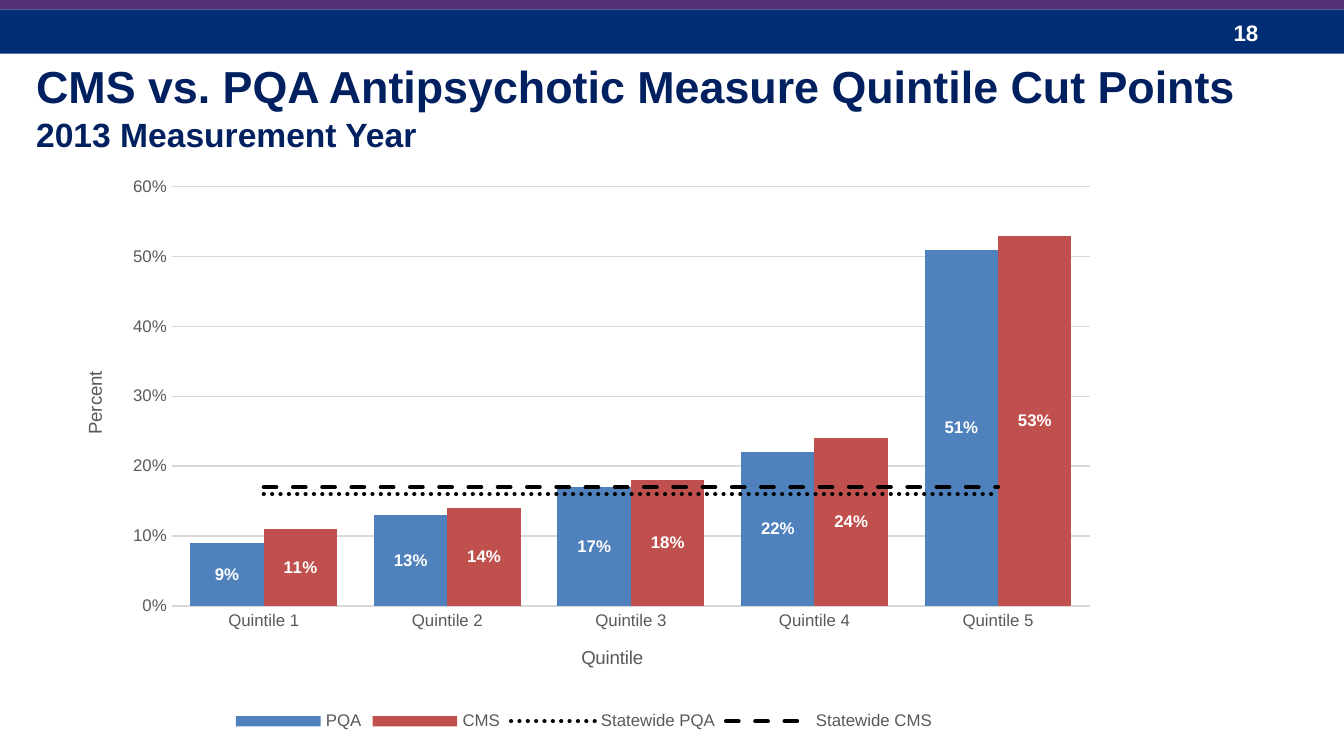
from lxml import etree
from pptx import Presentation
from pptx.chart.data import CategoryChartData
from pptx.dml.color import RGBColor
from pptx.enum import chart as charts, dml, shapes, text
from pptx.oxml import ns
from pptx.util import Inches, Pt

FONT = "Arial"
GREY = "595959"
GRID = "D9D9D9"
CHART_WIDTH, CHART_HEIGHT = 7.85, 4.25


def color(value):
    return RGBColor.from_string(value)


def style(font, size, value, bold=False):
    font.name = FONT
    font.size = Pt(size)
    font.bold = bold
    font.color.rgb = color(value)


def add_band(page, top, height, fill):
    band = page.shapes.add_shape(shapes.MSO_SHAPE.RECTANGLE, 0, Inches(top),
                                 Inches(10), Inches(height))
    band.shadow.inherit = False
    band.fill.solid()
    band.fill.fore_color.rgb = color(fill)
    band.line.fill.background()


def add_text(page, place, lines, value, gap=0):
    box = page.shapes.add_textbox(*(Inches(n) for n in place))
    frame = box.text_frame
    frame.word_wrap = True
    frame.margin_top = Inches(0.04)
    frame.vertical_anchor = text.MSO_ANCHOR.TOP
    for index, (words, size) in enumerate(lines):
        para = frame.add_paragraph() if index else frame.paragraphs[0]
        if index:
            para.space_before = Pt(gap)
        span = para.add_run()
        span.text = words
        style(span.font, size, value, True)


def child(parent, tag, value=None):
    node = etree.SubElement(parent, ns.qn(tag))
    if value is not None:
        node.set("val", str(value))
    return node


def set_layout(parent, index, inner=False, **inches):
    """Place a chart part, measured in inches from the chart's corner."""
    for old in parent.findall(ns.qn("c:layout")):
        parent.remove(old)
    layout = etree.Element(ns.qn("c:layout"))
    manual = child(layout, "c:manualLayout")
    if inner:
        child(manual, "c:layoutTarget", "inner")
    for side in "xy":
        child(manual, f"c:{side}Mode", "edge")
    for name, value in inches.items():
        whole = CHART_WIDTH if name in "xw" else CHART_HEIGHT
        child(manual, f"c:{name}", value / whole)
    parent.insert(index, layout)


def style_axis(axis, title, x, y):
    axis.major_tick_mark = axis.minor_tick_mark = charts.XL_TICK_MARK.NONE
    style(axis.tick_labels.font, 9, GREY)
    span = axis.axis_title.text_frame.paragraphs[0].add_run()
    span.text = title
    style(span.font, 10, GREY)
    set_layout(axis.axis_title._element, 1, x=x, y=y)


def style_line(line, value, width=0.75):
    line.color.rgb = color(value)
    line.width = Pt(width)


def style_bars(series, fill):
    series.format.fill.solid()
    series.format.fill.fore_color.rgb = color(fill)
    labels = series.data_labels
    labels.show_value = True
    labels.number_format = "0%"
    labels.number_format_is_linked = False
    labels.position = charts.XL_LABEL_POSITION.CENTER
    style(labels.font, 9, "FFFFFF", True)


def move_to_lines(chart, first):
    """Turn the series from index first on into lines on the same axes."""
    bars = chart.plots[0]._element
    lines = etree.Element(ns.qn("c:lineChart"))
    child(lines, "c:grouping", "standard")
    child(lines, "c:varyColors", 0)
    for series in bars.findall(ns.qn("c:ser"))[first:]:
        for invert in series.findall(ns.qn("c:invertIfNegative")):
            series.remove(invert)
        lines.append(series)
    child(lines, "c:marker", 1)
    for axis in bars.findall(ns.qn("c:axId")):
        child(lines, "c:axId", axis.get("val"))
    bars.addnext(lines)


def add_quintile_chart(page):
    data = CategoryChartData(number_format="0%")
    data.categories = [f"Quintile {n}" for n in range(1, 6)]
    data.add_series("PQA", [0.09, 0.13, 0.17, 0.22, 0.51])
    data.add_series("CMS", [0.11, 0.14, 0.18, 0.24, 0.53])
    data.add_series("Statewide PQA", [0.16] * 5)
    data.add_series("Statewide CMS", [0.17] * 5)
    chart = page.shapes.add_chart(
        charts.XL_CHART_TYPE.COLUMN_CLUSTERED, Inches(0.42), Inches(1.23),
        Inches(CHART_WIDTH), Inches(CHART_HEIGHT), data).chart
    style(chart.font, 10, "000000")
    chart.has_title = False

    # Axes and legend
    style_axis(chart.category_axis, "Quintile", 3.88, 3.55)
    style_line(chart.category_axis.format.line, GRID)
    values = chart.value_axis
    style_axis(values, "Percent", 0.17, 1.51)
    values.format.line.fill.background()
    values.minimum_scale, values.maximum_scale = 0, 0.6
    values.major_unit = 0.1
    values.tick_labels.number_format = "0%"
    values.tick_labels.number_format_is_linked = False
    style_line(values.major_gridlines.format.line, GRID)
    chart.has_legend = True
    chart.legend.position = charts.XL_LEGEND_POSITION.BOTTOM
    chart.legend.include_in_layout = False
    style(chart.legend.font, 9, GREY)

    # Quintile bars
    bars = chart.plots[0]
    bars.gap_width, bars.overlap = 50, 0
    bars.vary_by_categories = False
    for series, fill in zip(bars.series, ("4F81BD", "C0504D")):
        style_bars(series, fill)

    # Statewide lines with round caps
    move_to_lines(chart, 2)
    dashes = (dml.MSO_LINE.ROUND_DOT, dml.MSO_LINE.DASH)
    for series, dash in zip(chart.plots[1].series, dashes):
        series.smooth = False
        series.marker.style = charts.XL_MARKER_STYLE.NONE
        line = series.format.line
        style_line(line, "000000", 2.25)
        line.dash_style = dash
        series._element.find(".//" + ns.qn("a:ln")).set("cap", "rnd")

    area = chart.plots[0]._element.getparent()
    set_layout(area, 0, True, x=0.86, y=0.16, w=6.83, h=3.12)


def main():
    deck = Presentation()
    deck.slide_width = Inches(10)
    deck.slide_height = Inches(10) * 9 // 16
    page = deck.slides.add_slide(deck.slide_layouts[6])
    # Header bands and page number
    add_band(page, 0.07, 0.33, "002D73")
    add_text(page, (9.08, 0.1, 0.75, 0.3), [("18", 12)], "FFFFFF")
    add_band(page, -0.02, 0.09, "553278")
    # Title
    add_text(page, (0.17, 0.4, 9.58, 0.58),
             [("CMS vs. PQA Antipsychotic Measure Quintile Cut Points", 24),
              ("2013 Measurement Year", 18)], "002060", 0.75)
    add_quintile_chart(page)
    deck.save("out.pptx")


if __name__ == "__main__":
    main()
